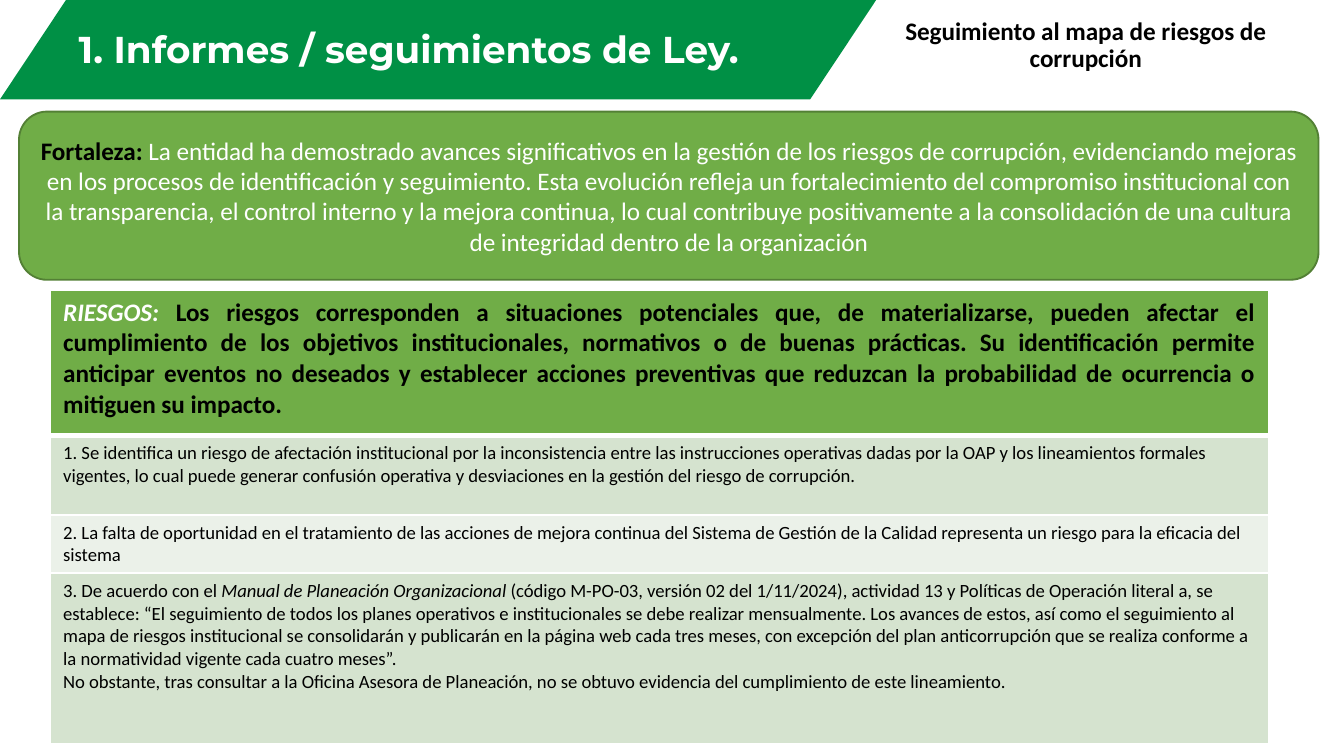
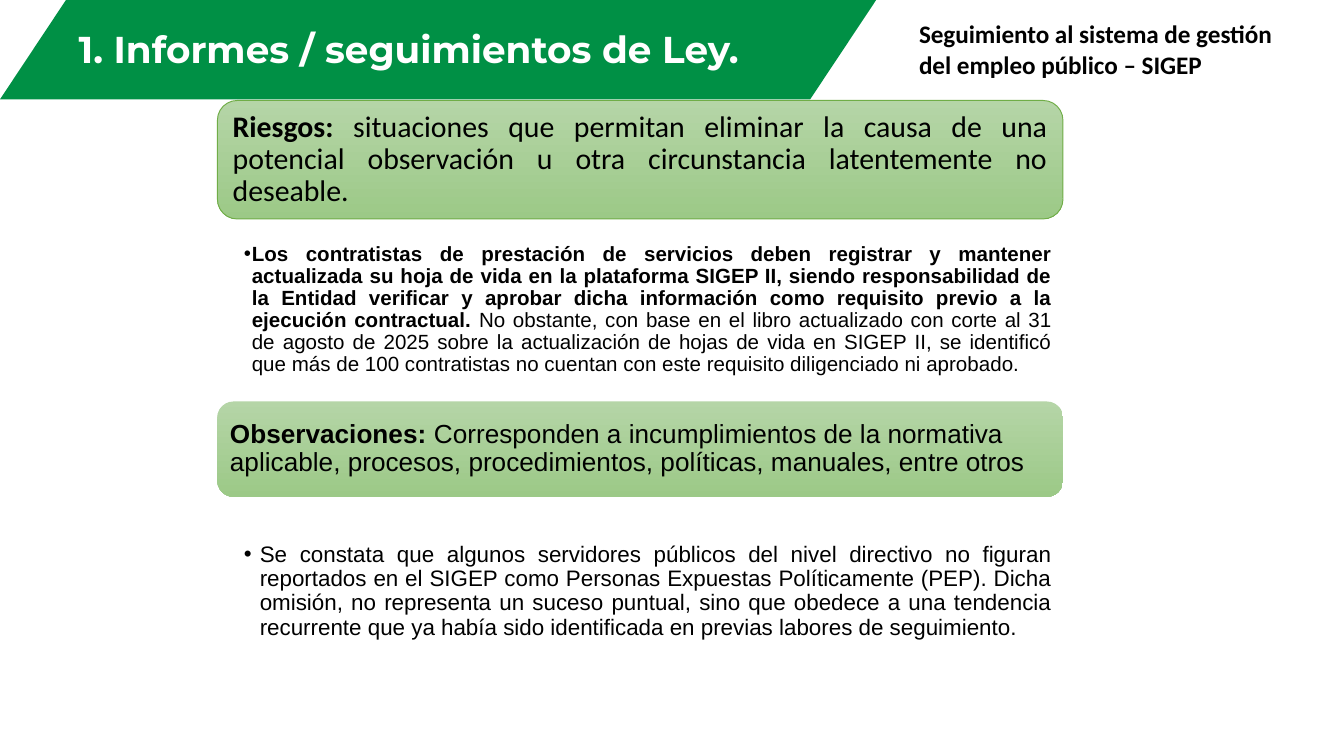
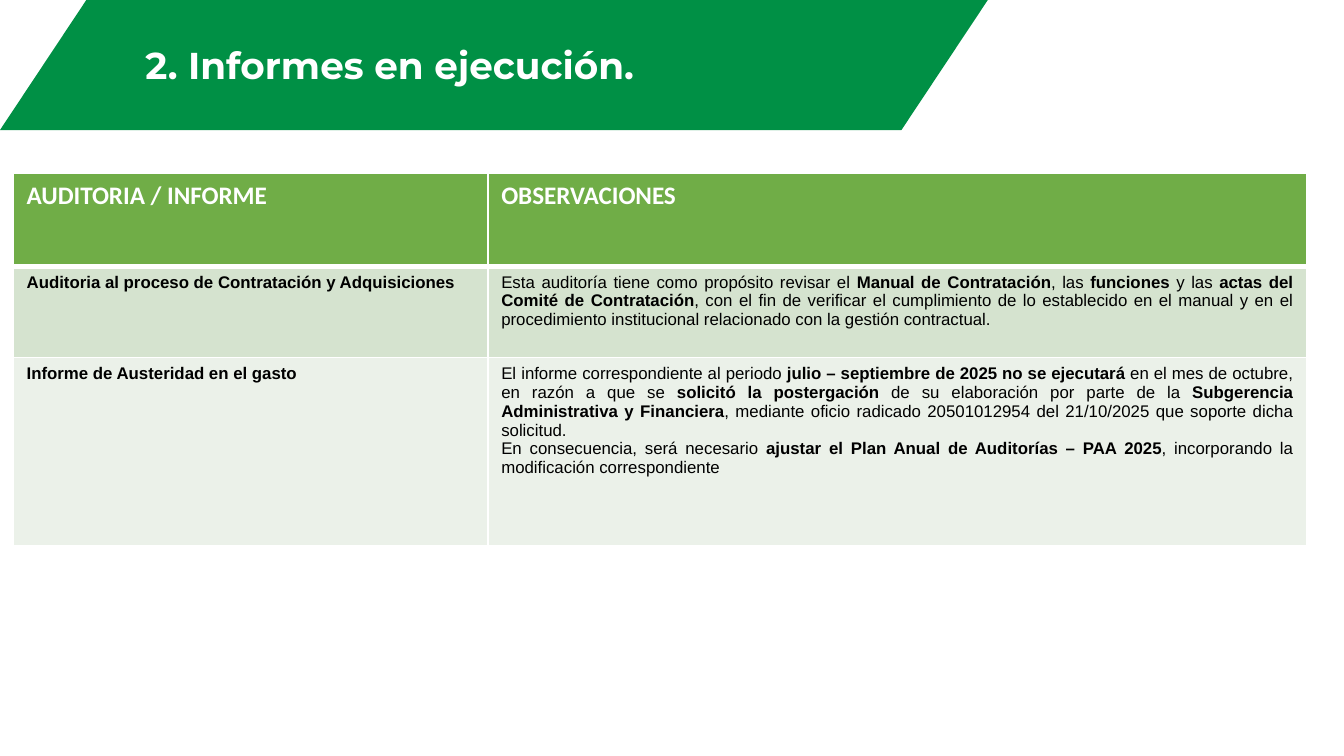
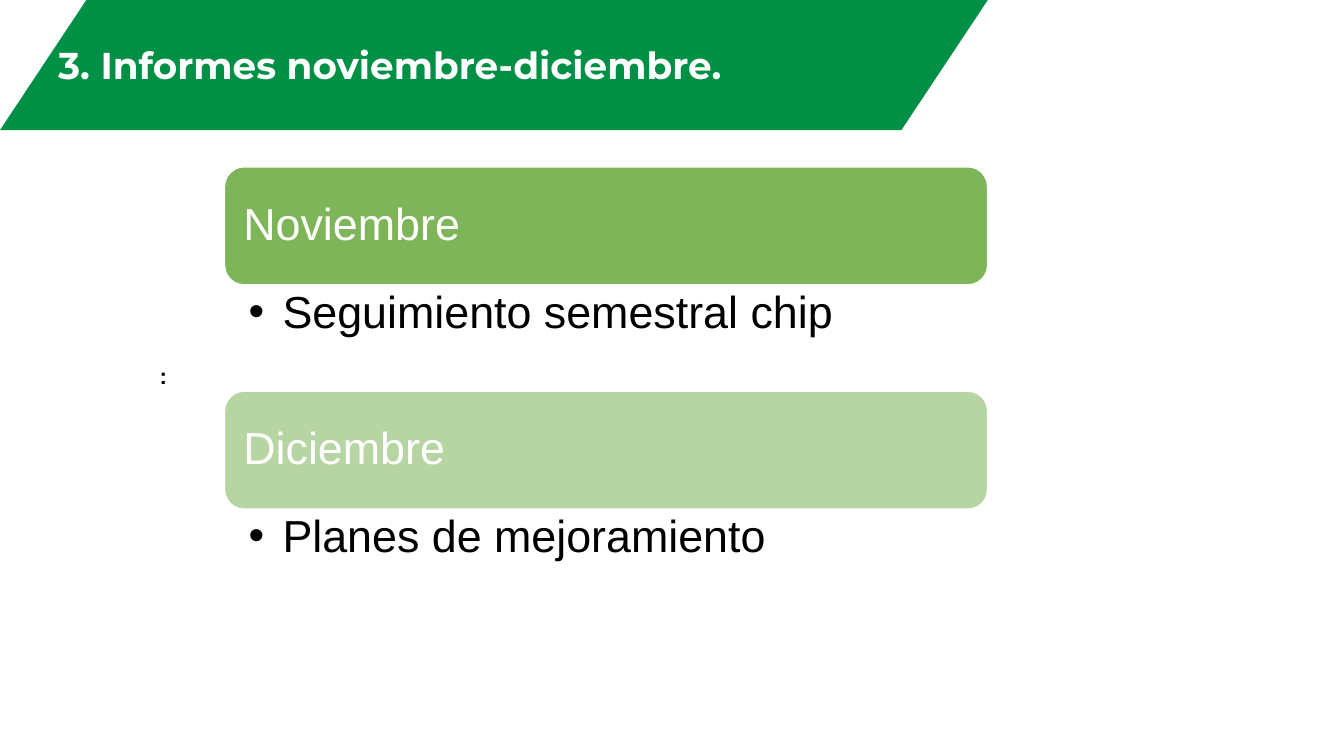
import lxml.etree
import pptx
import pptx.dml.color
import pptx.enum.shapes
import pptx.enum.text
import pptx.oxml.ns
import pptx.util

Kind = pptx.enum.shapes.MSO_SHAPE
Align = pptx.enum.text.PP_ALIGN
Anchor = pptx.enum.text.MSO_ANCHOR

BAND, LEAF, RIM = "009045", "70AD47", "538035"
PALE, MIST = "D5E3CF", "EBF1E9"
SHADE = ("B5D5A7", "9CC987")
WHITE, BLACK = "FFFFFF", "000000"
BOLD = {"bold": True}


def tint(code):
    """Turn a hex string into a colour."""
    return pptx.dml.color.RGBColor.from_string(code)


def span(*sizes):
    """Turn centimetres into lengths."""
    return [pptx.util.Cm(size) for size in sizes]


def child(node, name, **attrs):
    """Append a drawing element to a node."""
    return lxml.etree.SubElement(node, pptx.oxml.ns.qn(name), **attrs)


def look(size, font="Arial", hue=BLACK, bold=False, italic=False):
    """Describe how a run of text looks."""
    return dict(size=size, font=font, hue=hue, bold=bold, italic=italic)


def write(frame, text, base, alt=BOLD, align=Align.LEFT, lead=None, dot=None, left=0):
    """Fill a frame, giving the parts between asterisks the other look."""
    frame.word_wrap = True
    for row, line in enumerate(text.split("\n")):
        par = frame.add_paragraph() if row else frame.paragraphs[0]
        par.alignment = align
        if lead:
            par.line_spacing = lead
        props = par._p.get_or_add_pPr()
        if left:
            props.set("marL", str(pptx.util.Cm(left)))
        if dot:
            props.set("marL", str(pptx.util.Cm(dot)))
            props.set("indent", str(-pptx.util.Cm(dot)))
            child(props, "a:buFont", typeface="Arial")
            child(props, "a:buChar", char="•")
        for part, words in enumerate(line.split("*")):
            if words:
                run = par.add_run()
                run.text = words
                dress(run.font, **{**base, **(alt if part % 2 else {})})


def dress(face, size, font, hue, bold, italic):
    """Apply a look to a font."""
    face.size = pptx.util.Pt(size)
    face.name = font
    face.bold = bold
    face.italic = italic
    face.color.rgb = tint(hue)


def inset(frame, left, top, right, low):
    """Set the four margins of a frame."""
    frame.margin_left, frame.margin_top, frame.margin_right, frame.margin_bottom = span(left, top, right, low)


def label(slide, place, text, base, pads=None, anchor=Anchor.TOP, **style):
    """Add a text box."""
    frame = slide.shapes.add_textbox(*span(*place)).text_frame
    frame.vertical_anchor = anchor
    if pads:
        inset(frame, *pads)
    write(frame, text, base, **style)


def block(slide, kind, place, fill=None, line=None, width=1, alpha=None):
    """Add a flat shape, shaded when no fill is named."""
    shape = slide.shapes.add_shape(kind, *span(*place))
    shape.shadow.inherit = False
    if fill:
        shape.fill.solid()
        shape.fill.fore_color.rgb = tint(fill)
    else:
        shape.fill.gradient()
        shape.fill.gradient_angle = 270
        for stop, code in zip(shape.fill.gradient_stops, SHADE):
            stop.color.rgb = tint(code)
    if alpha:
        solid = shape._element.spPr.find(pptx.oxml.ns.qn("a:solidFill"))
        child(solid[0], "a:alpha", val=str(alpha * 1000))
    if line:
        shape.line.color.rgb = tint(line)
        shape.line.width = pptx.util.Pt(width)
    else:
        shape.line.fill.background()
    return shape


def card(slide, place, text, base, pad, align=Align.LEFT, **style):
    """Add a rounded card with its text in the middle."""
    frame = block(slide, Kind.ROUNDED_RECTANGLE, place, **style).text_frame
    frame.vertical_anchor = Anchor.MIDDLE
    inset(frame, pad, pad, pad, pad)
    write(frame, text, base, align=align, lead=0.9)


def banner(deck, text, size, place):
    """Start a blank slide with a slanted title band."""
    slide = deck.slides.add_slide(deck.slide_layouts[6])
    band = block(slide, Kind.PARALLELOGRAM, (0, 0, *size), BAND)
    band.adjustments[0] = 0.664
    label(slide, (*place, 14.94, 1.09), text, look(20, "Montserrat", WHITE, True),
          anchor=Anchor.BOTTOM, align=Align.CENTER, lead=0.9)
    return slide


def law(deck):
    """Start a slide on the reports required by law."""
    return banner(deck, "1. Informes / seguimientos de Ley. ", (16.56, 1.88), (0.36, 0.38))


def plan(deck, text):
    """Start a slide with the tall band."""
    return banner(deck, text, (18.67, 2.46), (0, 0.69))


def edge(cell, row):
    """Draw white borders, thick under the header row."""
    props = cell._tc.get_or_add_tcPr()
    widths = {"L": 1, "R": 1, "T": 3 if row == 1 else 1, "B": 1 if row else 3}
    for side, width in widths.items():
        line = child(props, "a:ln" + side, w=str(pptx.util.Pt(width)))
        child(child(line, "a:solidFill"), "a:srgbClr", val=WHITE)


def grid(slide, place, cols, rows, cells):
    """Add a banded table whose cells hold text, look and style."""
    shape = slide.shapes.add_table(len(rows), len(cols), *span(*place, sum(cols), sum(rows)))
    table = shape.table
    for col, width in zip(table.columns, span(*cols)):
        col.width = width
    for line, height in zip(table.rows, span(*rows)):
        line.height = height
    for row, items in enumerate(cells):
        for col, (text, base, style) in enumerate(items):
            cell = table.cell(row, col)
            edge(cell, row)
            cell.fill.solid()
            cell.fill.fore_color.rgb = tint((PALE if row % 2 else MIST) if row else LEAF)
            write(cell.text_frame, text, base, **style)


def fraud(deck):
    """Build the slide on corruption risks."""
    slide = law(deck)
    strong, small = look(13.5, "Calibri", bold=True), look(10, "Calibri")
    label(slide, (16.15, 0.23, 8.74, 1.32), "Seguimiento al mapa de riesgos de corrupción",
          strong, align=Align.CENTER, lead=0.9)
    box = block(slide, Kind.ROUNDED_RECTANGLE, (0.36, 2.11, 24.56, 3.18), LEAF, RIM)
    write(box.text_frame,
          "*Fortaleza: *La entidad ha demostrado avances significativos en la gestión de los riesgos de "
          "corrupción, evidenciando mejoras en los procesos de identificación y seguimiento. Esta evolución "
          "refleja un fortalecimiento del compromiso institucional con la transparencia, el control interno y "
          "la mejora continua, lo cual contribuye positivamente a la consolidación de una cultura de "
          "integridad dentro de la organización",
          look(13.5, "Calibri", WHITE), alt={"bold": True, "hue": BLACK}, align=Align.CENTER)
    head = ("*RIESGOS: *Los riesgos corresponden a situaciones potenciales que, de materializarse, pueden "
            "afectar el cumplimiento de los objetivos institucionales, normativos o de buenas prácticas. Su "
            "identificación permite anticipar eventos no deseados y establecer acciones preventivas que "
            "reduzcan la probabilidad de ocurrencia o mitiguen su impacto.")
    risks = [
        "1. Se identifica un riesgo de afectación institucional por la inconsistencia entre las instrucciones "
        "operativas dadas por la OAP y los lineamientos formales vigentes, lo cual puede generar confusión "
        "operativa y desviaciones en la gestión del riesgo de corrupción.",
        "2. La falta de oportunidad en el tratamiento de las acciones de mejora continua del Sistema de "
        "Gestión de la Calidad representa un riesgo para la eficacia del sistema",
        "3. De acuerdo con el *Manual de Planeación Organizacional* (código M-PO-03, versión 02 del "
        "1/11/2024), actividad 13 y Políticas de Operación literal a, se establece: “El seguimiento de todos "
        "los planes operativos e institucionales se debe realizar mensualmente. Los avances de estos, así "
        "como el seguimiento al mapa de riesgos institucional se consolidarán y publicarán en la página web "
        "cada tres meses, con excepción del plan anticorrupción que se realiza conforme a la normatividad "
        "vigente cada cuatro meses”.\n"
        "No obstante, tras consultar a la Oficina Asesora de Planeación, no se obtuvo evidencia del "
        "cumplimiento de este lineamiento.",
    ]
    top = (head, strong, {"alt": {"hue": WHITE, "italic": True}, "align": Align.JUSTIFY})
    rest = [[(risk, small, {"alt": {"italic": True}})] for risk in risks]
    grid(slide, (0.94, 5.49), [23.04], [2.74, 1.5, 1.09, 3.23], [[top], *rest])


def staff(deck):
    """Build the slide on the public employment system."""
    slide = law(deck)
    label(slide, (16.15, 0.23, 8.74, 1.42), "Seguimiento al sistema de gestión del empleo público – SIGEP",
          look(13.5, "Calibri", bold=True), left=0.97)
    left, width = 4.11, 15.98
    card(slide, (left, 1.9, width, 2.24),
         "*Riesgos: *situaciones que permitan eliminar la causa de una potencial observación u otra "
         "circunstancia latentemente no deseable.",
         look(16, "Calibri"), 0.18, Align.JUSTIFY, line=LEAF, width=0.5)
    card(slide, (left, 7.59, width, 1.8),
         "*Observaciones: *Corresponden a incumplimientos de la normativa aplicable, procesos, "
         "procedimientos, políticas, manuales, entre otros",
         look(14), 0.15)
    notes = [
        (4.14, 3.43, 0.46, 11, 0.15,
         "*Los contratistas de prestación de servicios deben registrar y mantener actualizada su hoja de vida "
         "en la plataforma SIGEP II, siendo responsabilidad de la Entidad verificar y aprobar dicha "
         "información como requisito previo a la ejecución contractual. *No obstante, con base en el libro "
         "actualizado con corte al 31 de agosto de 2025 sobre la actualización de hojas de vida en SIGEP II, "
         "se identificó que más de 100 contratistas no cuentan con este requisito diligenciado ni aprobado."),
        (9.37, 3.18, 0.9, 12, 0.3,
         "Se constata que algunos servidores públicos del nivel directivo no figuran reportados en el SIGEP "
         "como Personas Expuestas Políticamente (PEP). Dicha omisión, no representa un suceso puntual, sino "
         "que obedece a una tendencia recurrente que ya había sido identificada en previas labores de "
         "seguimiento."),
    ]
    for top, height, pad, size, dot, text in notes:
        label(slide, (left, top, width, height), text, look(size), pads=(0.5, pad, 0.2, 0.03),
              align=Align.JUSTIFY, lead=0.9, dot=dot)


def audit(deck):
    """Build the slide on reports under way."""
    slide = plan(deck, "2. Informes en ejecución. ")
    head = look(13.5, "Calibri", WHITE, True)
    name, body, full = look(9, bold=True), look(9), {"align": Align.JUSTIFY}
    grid(slide, (0.25, 3.28), [8.97, 15.47], [1.75, 1.73, 3.56], [
        [("AUDITORIA / INFORME", head, {}), ("OBSERVACIONES", head, {})],
        [("Auditoria al proceso de Contratación y Adquisiciones", name, {}),
         ("Esta auditoría tiene como propósito revisar el *Manual de Contratación*, las *funciones* y las "
          "*actas del Comité de Contratación*, con el fin de verificar el cumplimiento de lo establecido en "
          "el manual y en el procedimiento institucional relacionado con la gestión contractual.", body, full)],
        [("Informe de Austeridad en el gasto", name, {}),
         ("El informe correspondiente al periodo *julio – septiembre de 2025 no se ejecutará* en el mes de "
          "octubre, en razón a que se *solicitó la postergación* de su elaboración por parte de la "
          "*Subgerencia Administrativa y Financiera*, mediante oficio radicado 20501012954 del 21/10/2025 "
          "que soporte dicha solicitud.\n"
          "En consecuencia, será necesario *ajustar el Plan Anual de Auditorías – PAA 2025*, incorporando la "
          "modificación correspondiente", body, full)],
    ])


def months(deck):
    """Build the slide on the reports of the last two months."""
    slide = plan(deck, "3. Informes noviembre-diciembre. ")
    label(slide, (2.77, 6.73, 4.62, 0.76), ":", look(12, bold=True), align=Align.JUSTIFY)
    items = [("Noviembre", "Seguimiento semestral chip", 90), ("Diciembre", "Planes de mejoramiento", 50)]
    for step, (month, task, alpha) in enumerate(items):
        top = 3.15 + 4.24 * step
        card(slide, (4.24, top, 14.43, 2.24), month, look(24, hue=WHITE), 0.25,
             fill=LEAF, line=WHITE, alpha=alpha)
        label(slide, (4.24, top + 2.24, 14.43, 1.98), task, look(24), pads=(0.46, 0.08, 0.48, 0.08),
              lead=0.9, dot=0.64)


def main():
    """Build and save the deck."""
    deck = pptx.Presentation()
    deck.slide_width, deck.slide_height = span(25.4, 14.29)
    for build in (fraud, staff, audit, months):
        build(deck)
    deck.save("out.pptx")


if __name__ == "__main__":
    main()
